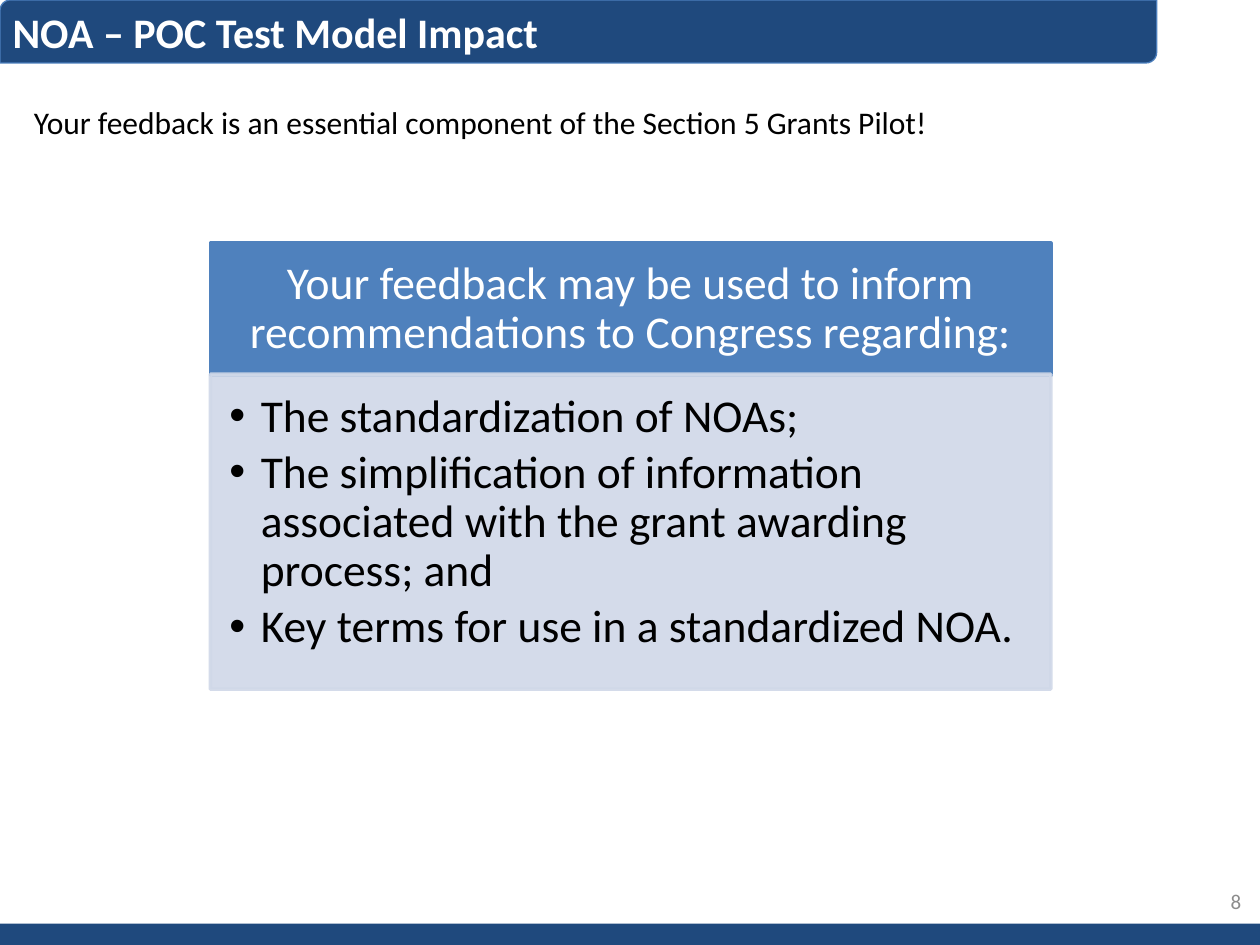
from dataclasses import dataclass

from lxml.etree import SubElement
from pptx import Presentation
from pptx.dml.color import RGBColor as Color
from pptx.enum.shapes import MSO_SHAPE as Shape
from pptx.enum.text import MSO_ANCHOR as Anchor, MSO_AUTO_SIZE as AutoSize, PP_ALIGN as Align
from pptx.oxml.ns import qn
from pptx.util import Inches, Pt


@dataclass(frozen=True)
class Theme:
    font: str = "Calibri"
    navy: str = "1F497D"
    band_line: str = "4B7EBC"
    blue: str = "4F81BD"
    pale: str = "D0D8E8"
    white: str = "FFFFFF"
    black: str = "000000"
    grey: str = "8C8C8C"
    title_size: float = 24
    intro_size: float = 18
    panel_size: float = 26
    number_size: float = 12


@dataclass(frozen=True)
class Box:
    left: float
    top: float
    width: float
    height: float

    def lengths(self) -> tuple:
        return tuple(Inches(n) for n in (self.left, self.top, self.width, self.height))


@dataclass(frozen=True)
class TextStyle:
    size: float
    color: str
    bold: bool = False
    align: Align = Align.LEFT
    anchor: Anchor = Anchor.TOP
    insets: tuple = (0.1, 0.05, 0.1, 0.05)
    line_spacing: float = 1.0
    space_after: float = 0
    bullet_indent: float = 0


@dataclass(frozen=True)
class Panel:
    box: Box
    fill: str
    opacity: int
    style: TextStyle
    lines: tuple


THEME = Theme()
PANEL_LEFT, PANEL_WIDTH = 1.67, 6.67
PANELS = (
    Panel(
        Box(PANEL_LEFT, 1.93, PANEL_WIDTH, 1.05), THEME.blue, 100,
        TextStyle(THEME.panel_size, THEME.white, align=Align.CENTER, anchor=Anchor.MIDDLE,
                  insets=(0.2, 0.12, 0.2, 0.12), line_spacing=0.9),
        ("Your feedback may be used to inform recommendations to Congress regarding:",),
    ),
    Panel(
        Box(PANEL_LEFT, 2.97, PANEL_WIDTH, 2.5), THEME.pale, 90,
        TextStyle(THEME.panel_size, THEME.black, insets=(0.15, 0.15, 0.2, 0.23),
                  line_spacing=0.9, space_after=4, bullet_indent=0.25),
        ("The standardization of NOAs;",
         "The simplification of information associated with the grant awarding process; and",
         "Key terms for use in a standardized NOA."),
    ),
)


def add_bullet(paragraph, indent: float) -> None:
    properties = paragraph._p.get_or_add_pPr()
    properties.set("marL", str(Inches(indent)))
    properties.set("indent", str(-Inches(indent)))
    SubElement(properties, qn("a:buFont")).set("typeface", "Arial")
    SubElement(properties, qn("a:buChar")).set("char", "•")


def write_text(shape, lines: tuple, style: TextStyle) -> None:
    frame = shape.text_frame
    frame.word_wrap = True
    frame.auto_size = AutoSize.NONE
    frame.vertical_anchor = style.anchor
    (frame.margin_left, frame.margin_top,
     frame.margin_right, frame.margin_bottom) = (Inches(n) for n in style.insets)
    for index, line in enumerate(lines):
        paragraph = frame.add_paragraph() if index else frame.paragraphs[0]
        if style.bullet_indent:
            add_bullet(paragraph, style.bullet_indent)
        paragraph.alignment = style.align
        paragraph.line_spacing = style.line_spacing
        paragraph.space_after = Pt(style.space_after)
        run = paragraph.add_run()
        run.text = line
        run.font.name = THEME.font
        run.font.size = Pt(style.size)
        run.font.bold = style.bold
        run.font.color.rgb = Color.from_string(style.color)


def set_opacity(shape, percent: int) -> None:
    """Apply one opacity to both the fill and the outline."""
    for color in shape._element.spPr.iter(qn("a:srgbClr")):
        SubElement(color, qn("a:alpha")).set("val", str(percent * 1000))


def add_block(slide, kind: Shape, box: Box, fill: str, line: str = "", line_width: float = 0):
    shape = slide.shapes.add_shape(kind, *box.lengths())
    shape.shadow.inherit = False
    shape.fill.solid()
    shape.fill.fore_color.rgb = Color.from_string(fill)
    if line:
        shape.line.color.rgb = Color.from_string(line)
        shape.line.width = Pt(line_width)
    else:
        shape.line.fill.background()
    return shape


def add_label(slide, box: Box, text: str, style: TextStyle) -> None:
    write_text(slide.shapes.add_textbox(*box.lengths()), (text,), style)


def add_panel(slide, panel: Panel) -> None:
    shape = add_block(slide, Shape.RECTANGLE, panel.box, panel.fill, panel.fill, 2)
    if panel.opacity < 100:
        set_opacity(shape, panel.opacity)
    write_text(shape, panel.lines, panel.style)


def place_title(slide, box: Box, text: str, style: TextStyle) -> None:
    """Fill the title placeholder and bring it in front of the band."""
    title = slide.shapes.title
    title.left, title.top, title.width, title.height = box.lengths()
    write_text(title, (text,), style)
    title._element.getparent().append(title._element)


def main() -> None:
    presentation = Presentation()
    presentation.slide_width, presentation.slide_height = Inches(10), Inches(7.5)
    slide = presentation.slides.add_slide(presentation.slide_layouts[5])

    add_block(slide, Shape.RECTANGLE, Box(0, 7.33, 10, 0.17), THEME.navy)
    add_block(slide, Shape.ROUND_2_DIAG_RECTANGLE, Box(0, 0, 9.18, 0.5),
              THEME.navy, THEME.band_line, 0.75)
    place_title(slide, Box(0, 0, 8.67, 0.5), "NOA – POC Test Model Impact",
                TextStyle(THEME.title_size, THEME.white, bold=True))
    add_label(slide, Box(0.17, 0.77, 9.19, 0.4),
              "Your feedback is an essential component of the Section 5 Grants Pilot!",
              TextStyle(THEME.intro_size, THEME.black))
    for panel in PANELS:
        add_panel(slide, panel)
    add_label(slide, Box(7.62, 6.95, 2.33, 0.4), "8",
              TextStyle(THEME.number_size, THEME.grey, align=Align.RIGHT, anchor=Anchor.MIDDLE))

    presentation.save("out.pptx")


if __name__ == "__main__":
    main()
